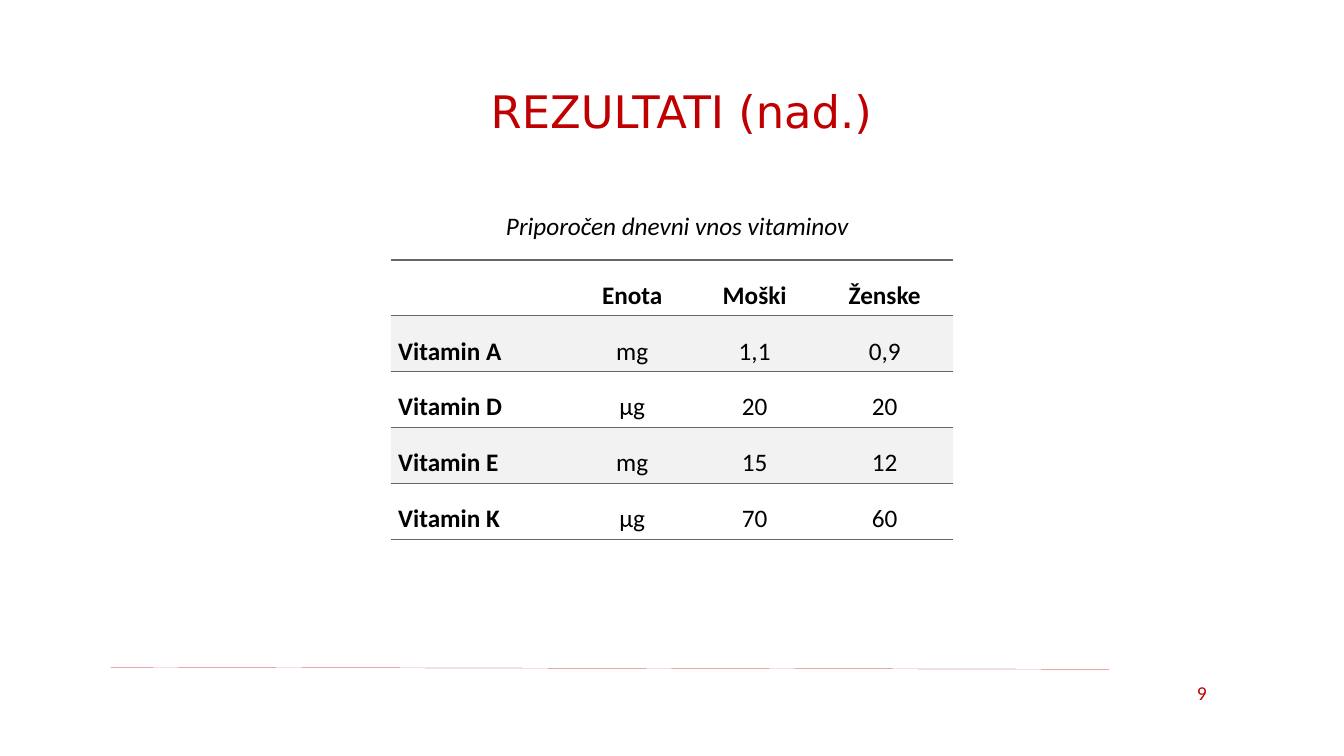
from lxml.etree import SubElement
from pptx import Presentation
from pptx.dml.color import RGBColor
from pptx.enum.dml import MSO_LINE
from pptx.enum.shapes import MSO_CONNECTOR
from pptx.enum.text import MSO_ANCHOR, PP_ALIGN
from pptx.oxml.ns import qn
from pptx.util import Inches, Pt

COLORS = {"red": "C00000", "black": "000000", "rule": "666666", "band": "F2F2F2", "white": "FFFFFF"}


def write(frame, text, color="black", align=PP_ALIGN.CENTER, spacing=1.0, **font_format):
    """Write one formatted line into a text frame."""
    para = frame.paragraphs[0]
    para.alignment, para.line_spacing = align, spacing
    span = para.add_run()
    span.text = text
    span.font.color.rgb = RGBColor.from_string(COLORS[color])
    for name, value in {"name": "Calibri", "size": Pt(18), **font_format}.items():
        setattr(span.font, name, value)


def add_border(cell, side, color=None):
    """Give one side of a cell a thin line, or none."""
    line = SubElement(cell._tc.get_or_add_tcPr(), qn(f"a:{side}"), w=str(Pt(1)))
    if color:
        fill = SubElement(line, qn("a:solidFill"))
        SubElement(fill, qn("a:srgbClr"), val=COLORS[color])
    else:
        SubElement(line, qn("a:noFill"))


deck = Presentation()
deck.slide_width, deck.slide_height = Inches(13.33), Inches(7.5)
page = deck.slides.add_slide(deck.slide_layouts[6])

# Footer rule
rule = page.shapes.add_connector(
    MSO_CONNECTOR.STRAIGHT, Inches(1.1), Inches(6.62), Inches(11), Inches(6.64))
rule.line.color.rgb = RGBColor.from_string(COLORS["red"])
rule.line.width = Pt(0.15)
rule.line.dash_style = MSO_LINE.ROUND_DOT
SubElement(rule._element.spPr, qn("a:effectLst"))

# Title, table caption and page number
labels = [
    ("REZULTATI (nad.)", (1.01, 0.69, 11.5, 0.88), True, MSO_ANCHOR.MIDDLE,
     {"name": "DejaVu Sans", "size": Pt(32), "color": "red", "spacing": 0.9}),
    ("Priporočen dnevni vnos vitaminov", (4.92, 2.04, 3.69, 0.4), False, MSO_ANCHOR.TOP,
     {"italic": True, "align": PP_ALIGN.LEFT}),
    ("9", (11.66, 6.71, 0.52, 0.4), True, MSO_ANCHOR.TOP,
     {"size": Pt(14), "color": "red"}),
]
for text, place, wrap, anchor, formats in labels:
    box = page.shapes.add_textbox(*map(Inches, place))
    box.text_frame.word_wrap = wrap
    box.text_frame.vertical_anchor = anchor
    write(box.text_frame, text, **formats)

# Table of daily intake
rows = [
    ("", "Enota", "Moški", "Ženske"),
    ("Vitamin A", "mg", "1,1", "0,9"),
    ("Vitamin D", "µg", "20", "20"),
    ("Vitamin E", "mg", "15", "12"),
    ("Vitamin K", "µg", "70", "60"),
]
column_widths = [1.79, 1.2, 1.23, 1.35]
table = page.shapes.add_table(
    len(rows), len(column_widths), Inches(3.88), Inches(2.58), Inches(5.57), Inches(2.77)).table
table.first_row = table.horz_banding = False
for column, width in zip(table.columns, column_widths):
    column.width = Inches(width)

cell_format = {"vertical_anchor": MSO_ANCHOR.MIDDLE, "margin_left": Inches(0.07),
               "margin_right": Inches(0.07), "margin_top": 0, "margin_bottom": 0}
for r, values in enumerate(rows):
    for c, value in enumerate(values):
        cell = table.cell(r, c)
        for name, setting in cell_format.items():
            setattr(cell, name, setting)
        for side, color in (("lnL", None), ("lnR", None), ("lnT", "rule"), ("lnB", "rule")):
            add_border(cell, side, color)
        cell.fill.solid()
        cell.fill.fore_color.rgb = RGBColor.from_string(COLORS["band" if r % 2 else "white"])
        if value:
            write(cell.text_frame, value, align=PP_ALIGN.CENTER if c else PP_ALIGN.LEFT,
                  spacing=1.5, bold=r == 0 or c == 0)

deck.save("out.pptx")
